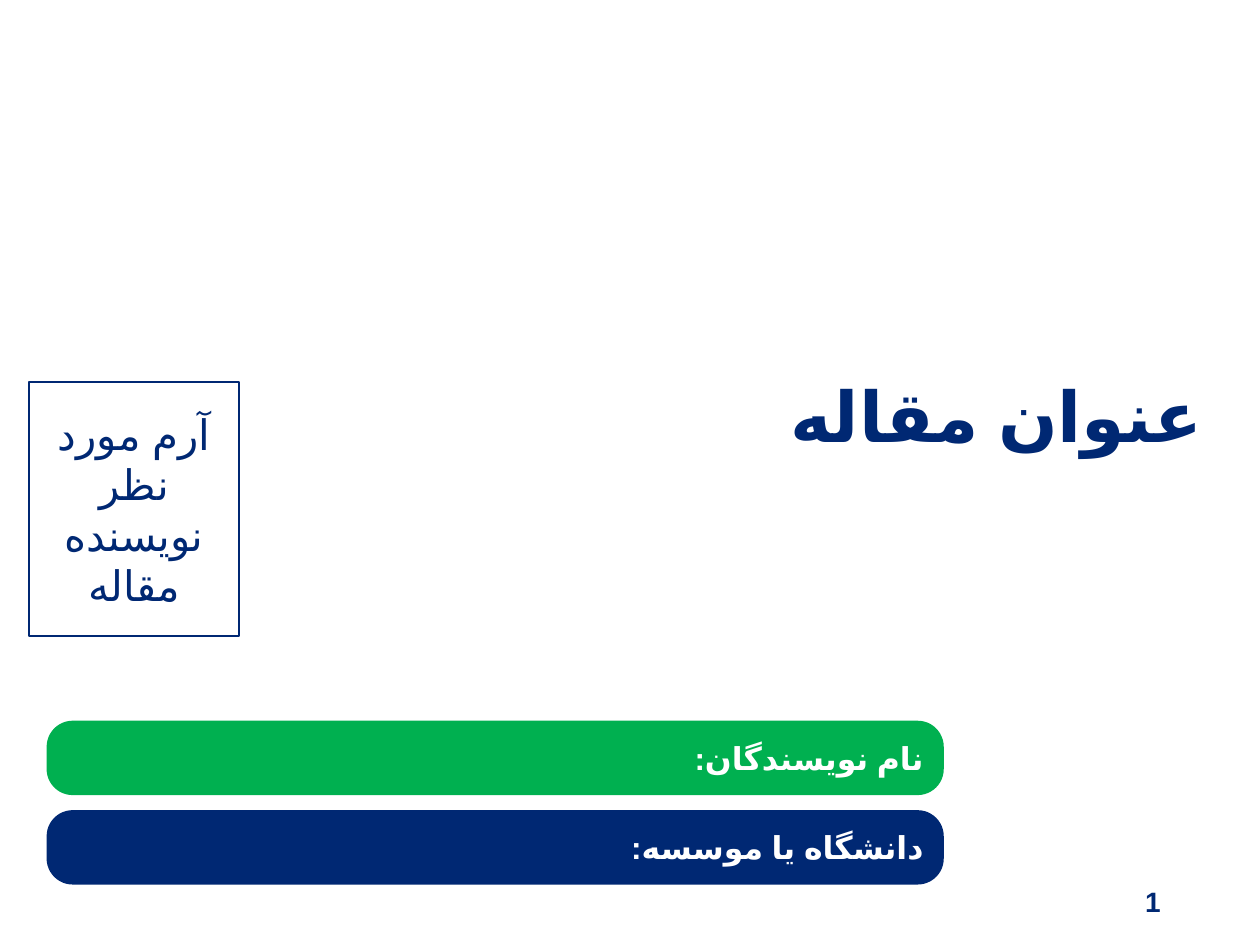
from lxml import etree
from pptx import Presentation
from pptx.dml.color import RGBColor
from pptx.enum.lang import MSO_LANGUAGE_ID
from pptx.enum.shapes import MSO_SHAPE
from pptx.enum.text import MSO_ANCHOR, PP_ALIGN
from pptx.oxml.ns import qn
from pptx.util import Inches, Pt

RIGHT, CENTER = PP_ALIGN.RIGHT, PP_ALIGN.CENTER
MIDDLE = MSO_ANCHOR.MIDDLE
RECTANGLE, ROUNDED = MSO_SHAPE.RECTANGLE, MSO_SHAPE.ROUNDED_RECTANGLE
PERSIAN = MSO_LANGUAGE_ID.FARSI
COLORS = {"navy": "002873", "green": "00B050", "white": "FFFFFF"}
ARABIC_FONT = "Arial"

# Content
TITLE = "عنوان مقاله"
EMBLEM = "آرم مورد نظر نویسنده مقاله"
BARS = [("نام نویسندگان:", "green"), ("دانشگاه یا موسسه:", "navy")]
PAGE_NUMBER = "1"

# Layout in inches
TITLE_AREA = (2.63, 2.97, 7.01, 0.72)
EMBLEM_AREA = (0.23, 3.03, 1.67, 2.02)
NUMBER_AREA = (7.06, 6.95, 2.25, 0.4)
BAR_LEFT, BAR_TOP, BAR_WIDTH, BAR_HEIGHT = 0.37, 5.72, 7.12, 0.59
BAR_STEP = 0.71


def color(name):
    return RGBColor.from_string(COLORS[name])


def write(box, text, font, size, ink="navy", bold=True, align=RIGHT, rtl=False):
    frame = box.text_frame
    frame.word_wrap = True
    frame.vertical_anchor = MIDDLE
    para = frame.paragraphs[0]
    para.text = text
    para.alignment = align
    para.font.name = font
    para.font.size = Pt(size)
    para.font.bold = bold
    para.font.color.rgb = color(ink)
    # The language and the complex-script slot choose the Arabic letterforms
    para.font.language_id = PERSIAN
    para.runs[0].font.language_id = PERSIAN
    properties = para.font.fill._xPr
    etree.SubElement(properties, qn("a:cs")).set("typeface", ARABIC_FONT)
    if rtl:
        properties.getparent().set("rtl", "1")
    return para


def add_text(page, area):
    return page.shapes.add_textbox(*map(Inches, area))


def add_box(page, kind, area, fill=None, line=None):
    box = page.shapes.add_shape(kind, *map(Inches, area))
    box.shadow.inherit = False
    if fill:
        box.fill.solid()
        box.fill.fore_color.rgb = color(fill)
    else:
        box.fill.background()
    if line:
        box.line.color.rgb = color(line)
        box.line.width = Pt(1)
    else:
        box.line.fill.background()
    return box


deck = Presentation()
deck.slide_width, deck.slide_height = Inches(10), Inches(7.5)
page = deck.slides.add_slide(deck.slide_layouts[6])

# Title
title = write(add_text(page, TITLE_AREA), TITLE, "Calibri", 40)
title.line_spacing = 0.9

# Emblem frame
emblem = add_box(page, RECTANGLE, EMBLEM_AREA, line="navy")
write(emblem, EMBLEM, "Calibri", 24, bold=False, align=CENTER)

# Author and institution bars
for row, (label, fill) in enumerate(BARS):
    area = (BAR_LEFT, BAR_TOP + row * BAR_STEP, BAR_WIDTH, BAR_HEIGHT)
    bar = add_box(page, ROUNDED, area, fill=fill)
    bar.adjustments[0] = 0.35
    write(bar, label, "Montserrat", 18, ink="white", rtl=True)

# Page number
write(add_text(page, NUMBER_AREA), PAGE_NUMBER, "Arial", 16, rtl=True)

deck.save("out.pptx")
